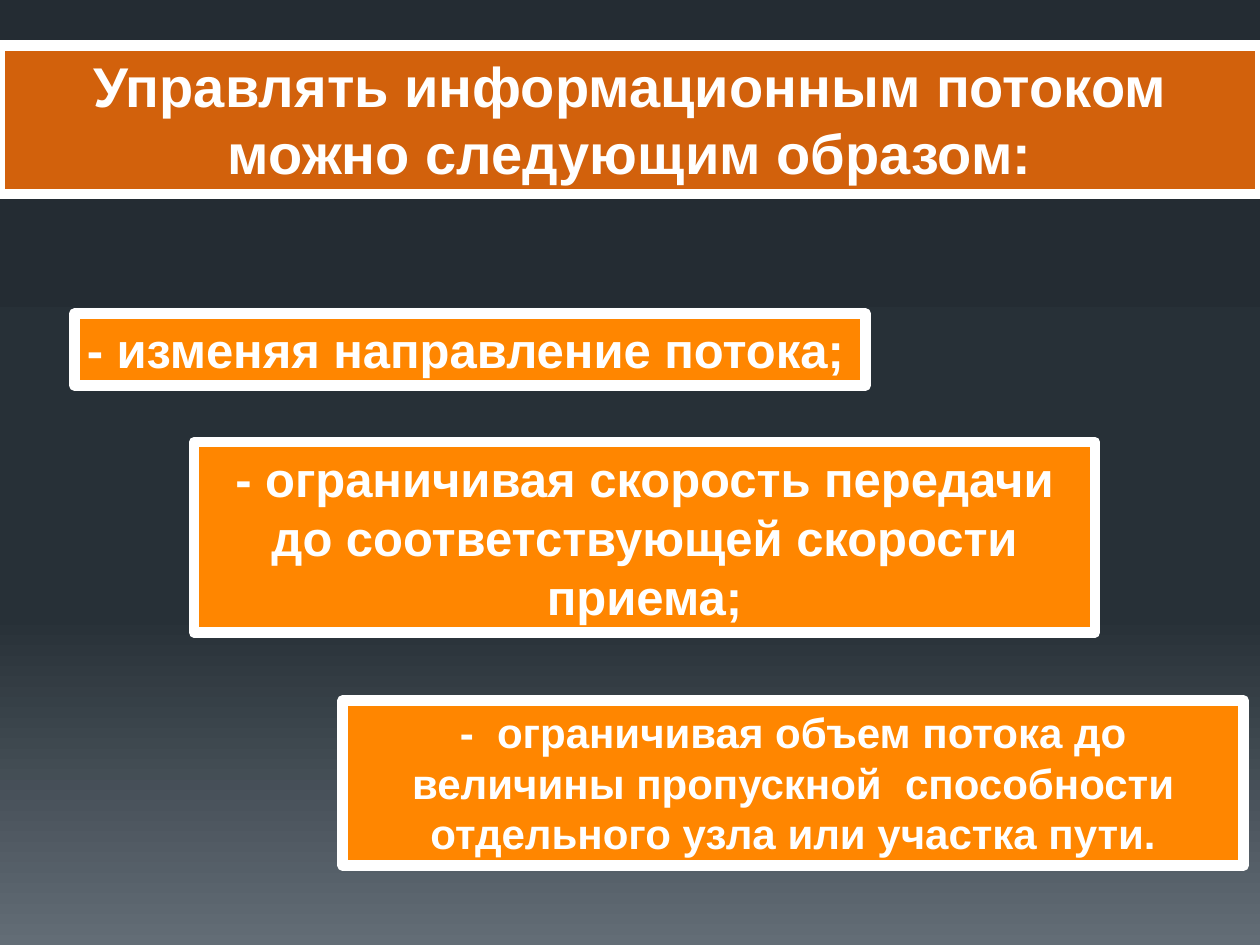
from copy import deepcopy
from dataclasses import dataclass

from pptx import Presentation
from pptx import util as u
from pptx.dml.color import RGBColor
from pptx.enum import text
from pptx.oxml.ns import qn

WHITE = RGBColor(0xFF, 0xFF, 0xFF)
ORANGE = RGBColor(0xFF, 0x86, 0x00)
RUST = RGBColor(0xD2, 0x61, 0x0C)
BACKGROUND_STOPS = [
    (0, RGBColor(0x24, 0x2C, 0x33)),
    (0.65, RGBColor(0x27, 0x30, 0x37)),
    (1, RGBColor(0x63, 0x6D, 0x76)),
]
CENTER = text.PP_ALIGN.CENTER
LEFT = text.PP_ALIGN.LEFT


@dataclass
class Panel:
    words: str
    left: float
    top: float
    width: float
    height: float
    size: int
    fill: RGBColor = ORANGE
    align: text.PP_ALIGN = CENTER
    wrap: bool = True


TITLE = Panel("Управлять информационным потоком можно следующим образом:",
              0, 0.36, 10, 1.18, 32, fill=RUST)
METHODS = [
    Panel("- изменяя направление потока;",
          0.59, 2.49, 6.28, 0.57, 28, align=LEFT, wrap=False),
    Panel("- ограничивая скорость передачи до соответствующей скорости приема;",
          1.54, 3.51, 7.15, 1.51, 28),
    Panel("-  ограничивая объем потока до величины пропускной  способности "
          "отдельного узла или участка пути.",
          2.72, 5.56, 7.15, 1.31, 24),
]


def paint_background(page) -> None:
    """Fill the page with a vertical three-stop gradient."""
    fill = page.background.fill
    fill.gradient()
    fill.gradient_angle = 270
    stop_list = page.element.find(".//" + qn("a:gsLst"))
    stop_list.insert(1, deepcopy(stop_list[0]))
    for stop, (position, color) in zip(fill.gradient_stops, BACKGROUND_STOPS):
        stop.position = position
        stop.color.rgb = color


def format_panel(box, panel: Panel) -> None:
    """Place a box, give it fill and white frame, and write its words."""
    box.left, box.top = u.Inches(panel.left), u.Inches(panel.top)
    box.width, box.height = u.Inches(panel.width), u.Inches(panel.height)
    box.fill.solid()
    box.fill.fore_color.rgb = panel.fill
    box.line.color.rgb = WHITE
    box.line.width = u.Pt(6)

    frame = box.text_frame
    frame.word_wrap = panel.wrap
    frame.auto_size = text.MSO_AUTO_SIZE.SHAPE_TO_FIT_TEXT
    frame.vertical_anchor = text.MSO_ANCHOR.TOP
    para = frame.paragraphs[0]
    para.alignment = panel.align
    span = para.add_run()
    span.text = panel.words
    span.font.name = "Arial"
    span.font.size = u.Pt(panel.size)
    span.font.bold = True
    span.font.color.rgb = WHITE


def main() -> None:
    deck = Presentation()
    deck.slide_width, deck.slide_height = u.Inches(10), u.Inches(7.5)
    page = deck.slides.add_slide(deck.slide_layouts.get_by_name("Title Only"))
    paint_background(page)

    # Title band
    format_panel(page.shapes.title, TITLE)

    # Stepped boxes, one per way of control
    for method in METHODS:
        format_panel(page.shapes.add_textbox(0, 0, 0, 0), method)

    deck.save("out.pptx")


if __name__ == "__main__":
    main()
